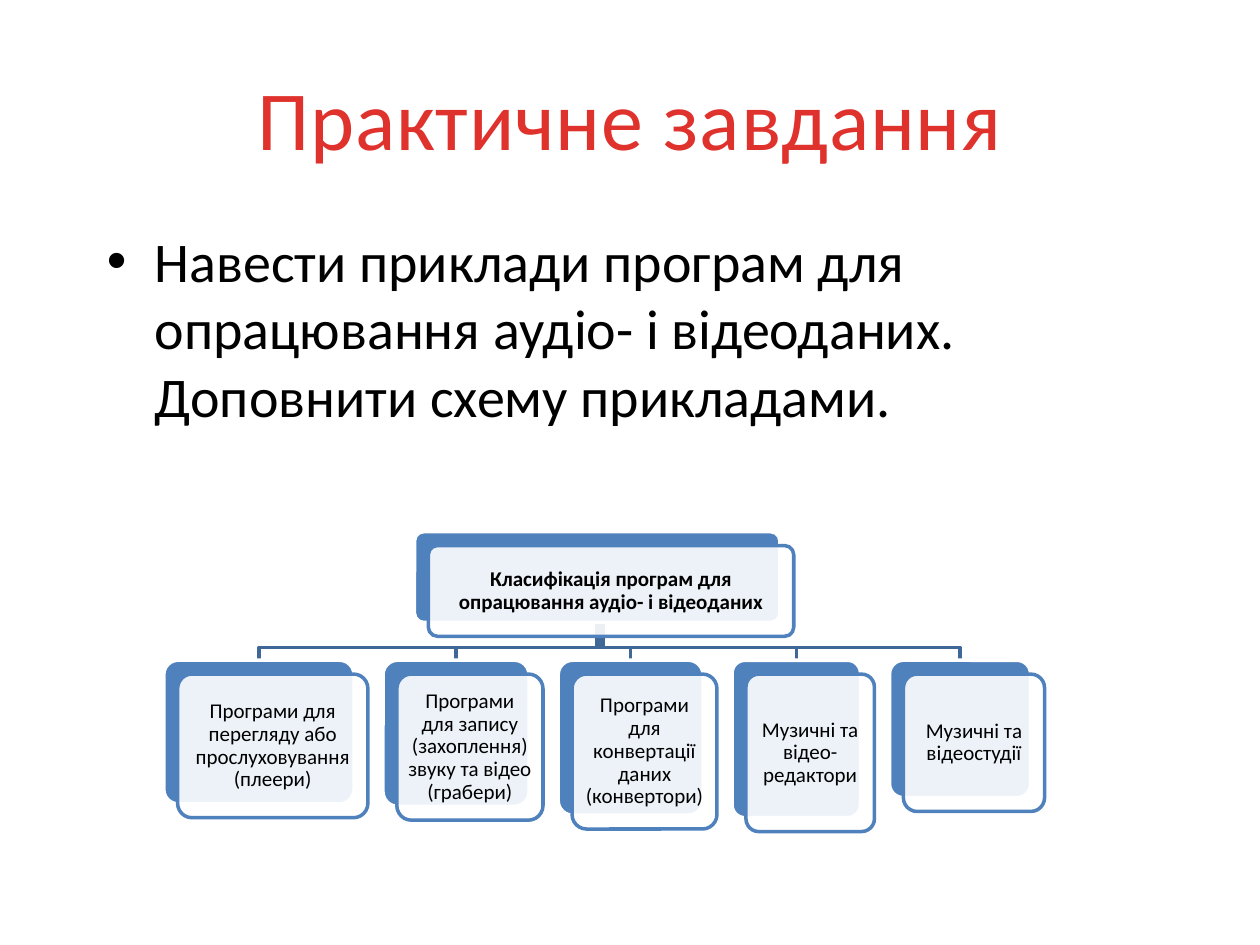
import pptx
import pptx.util
import pptx.dml.color
import pptx.enum.shapes
import pptx.enum.text
import pptx.oxml.ns
import pptx.oxml.xmlchemy
from pptx.util import Inches

COLORS = {"title": "E0322D", "text": "000000", "accent": "4F81BD",
          "link": "3F6797", "paper": "FFFFFF"}
OFFSET = 0.11

# left, width, height, text, start of the link under the root card
CARDS = [
    (1.3, 1.51, 1.14, "Програми для перегляду або прослуховування (плеери)", 4.79),
    (3.04, 1.16, 1.16, "Програми для запису (захоплення) звуку та відео (грабери)", 4.76),
    (4.43, 1.15, 1.23, "Програми для конвертації даних (конвертори)", 4.74),
    (5.81, 1.02, 1.25, "Музичні та відео-редактори", 4.74),
    (7.06, 1.12, 1.09, "Музичні та відеостудії", 4.74),
]
ROOT_LEFT, ROOT_TOP, ROOT_WIDTH, ROOT_HEIGHT = 3.29, 4.22, 2.9, 0.72
CARD_TOP, BUS_Y = 5.24, 5.14


class Deck:
    font = "Calibri"

    def __init__(self, prs):
        self.slide = prs.slides.add_slide(prs.slide_layouts[6])

    def color(self, name):
        return pptx.dml.color.RGBColor.from_string(COLORS[name])

    def add_xml(self, parent, tag, key, value):
        el = pptx.oxml.xmlchemy.OxmlElement(tag)
        el.set(key, value)
        parent.append(el)

    def caption(self, sp, text, size, color="text", bold=False, center=True, middle=True):
        tf = sp.text_frame
        tf.word_wrap = True
        anchor = pptx.enum.text.MSO_ANCHOR
        tf.vertical_anchor = anchor.MIDDLE if middle else anchor.TOP
        p = tf.paragraphs[0]
        p.add_run().text = text
        align = pptx.enum.text.PP_ALIGN
        p.alignment = align.CENTER if center else align.LEFT
        p.font.name = self.font
        p.font.size = pptx.util.Pt(size)
        p.font.bold = bold
        p.font.color.rgb = self.color(color)
        return p

    def textbox(self, left, top, width, height):
        return self.slide.shapes.add_textbox(*map(Inches, (left, top, width, height)))

    def title(self, text):
        p = self.caption(self.textbox(0.5, 0.3, 9, 1.25), text, 48, "title")
        p.runs[0].font._element.set("spc", "50")

    def bullet(self, text):
        sp = self.textbox(0.75, 1.75, 8.98, 4.95)
        pPr = sp.text_frame.paragraphs[0]._p.get_or_add_pPr()
        pPr.set("marL", str(Inches(0.38)))
        pPr.set("indent", str(Inches(-0.38)))
        self.add_xml(pPr, "a:buFont", "typeface", "Arial")
        self.add_xml(pPr, "a:buChar", "char", "•")
        self.caption(sp, text, 32, center=False, middle=False)

    def link(self, points):
        """Draw an open bent line through the points."""
        points = [(Inches(x), Inches(y)) for x, y in points]
        builder = self.slide.shapes.build_freeform(*points[0])
        builder.add_line_segments(points[1:], close=False)
        sp = builder.convert_to_shape()
        sp.shadow.inherit = False
        sp.fill.background()
        sp.line.color.rgb = self.color("link")
        sp.line.width = pptx.util.Pt(2)

    def plate(self, left, top, width, height, fill, line):
        sp = self.slide.shapes.add_shape(
            pptx.enum.shapes.MSO_SHAPE.ROUNDED_RECTANGLE,
            *map(Inches, (left, top, width, height)))
        sp.adjustments[0] = 0.1
        sp.shadow.inherit = False
        sp.fill.solid()
        sp.fill.fore_color.rgb = self.color(fill)
        sp.line.color.rgb = self.color(line)
        sp.line.width = pptx.util.Pt(2)
        return sp

    def card(self, left, top, width, height, text, bold=False):
        """Draw a solid plate with a translucent, captioned plate offset over it."""
        self.plate(left, top, width, height, "accent", "paper")
        sp = self.plate(left + OFFSET, top + OFFSET, width, height, "paper", "accent")
        qn = pptx.oxml.ns.qn
        clr = sp._element.spPr.find(qn("a:solidFill")).find(qn("a:srgbClr"))
        self.add_xml(clr, "a:alpha", "val", "90000")
        tf = sp.text_frame
        tf.margin_left = tf.margin_right = tf.margin_top = tf.margin_bottom = Inches(0.05)
        self.caption(sp, text, 12, bold=bold).line_spacing = 0.9


def main():
    prs = pptx.Presentation()
    prs.slide_width, prs.slide_height = Inches(10), Inches(7.5)
    deck = Deck(prs)
    deck.title("Практичне завдання")
    deck.bullet("Навести приклади програм для опрацювання аудіо- і відеоданих. "
                "Доповнити схему прикладами.")
    for left, width, _, _, start in reversed(CARDS):
        center = left + width / 2
        deck.link([(start, ROOT_TOP + ROOT_HEIGHT), (start, BUS_Y),
                   (center, BUS_Y), (center, CARD_TOP)])
    deck.card(ROOT_LEFT, ROOT_TOP, ROOT_WIDTH, ROOT_HEIGHT,
              "Класифікація програм для опрацювання аудіо- і відеоданих", bold=True)
    for left, width, height, text, _ in CARDS:
        deck.card(left, CARD_TOP, width, height, text)
    prs.save("out.pptx")


if __name__ == "__main__":
    main()
